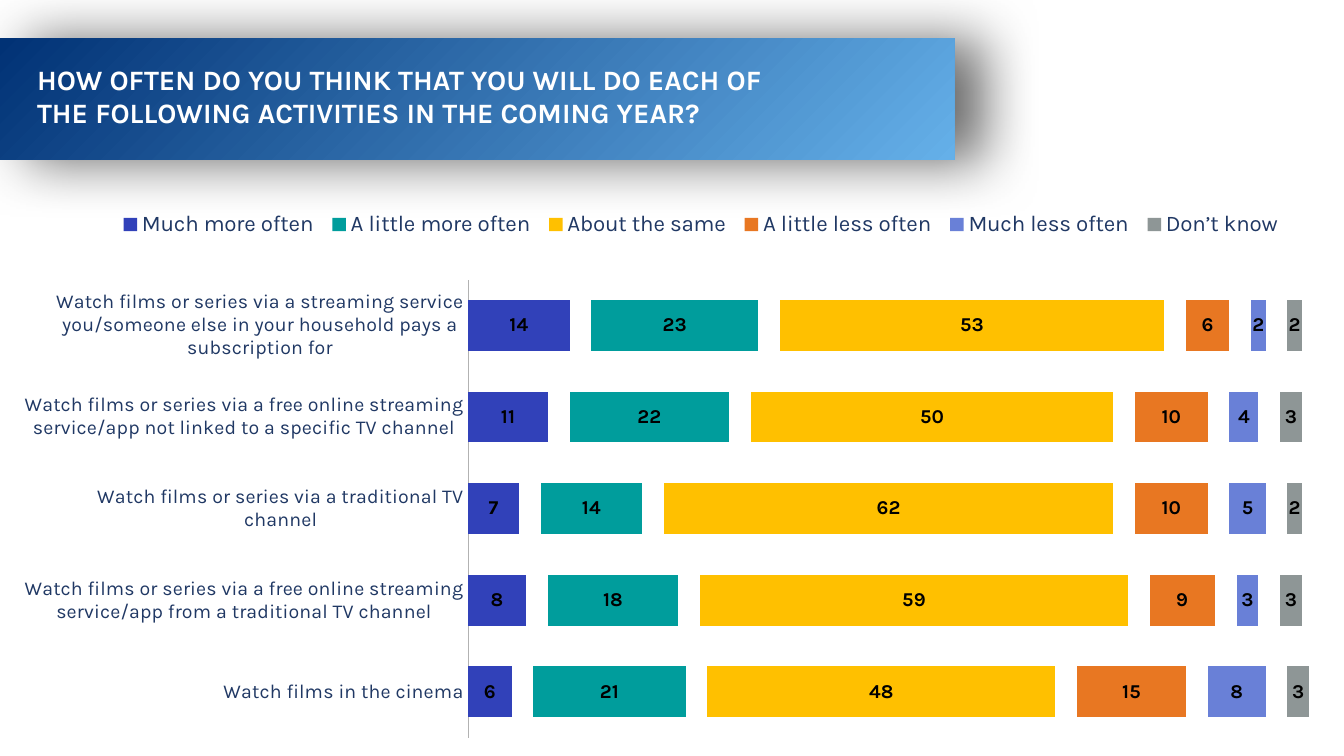
import pptx
import pptx.chart.data
import pptx.dml.color
import pptx.enum.chart
import pptx.enum.shapes
import pptx.enum.text
import pptx.oxml
import pptx.util

Pt = pptx.util.Pt
enum = pptx.enum.chart

THEME = {
    "font": "Karla", "base": "DejaVu Sans",
    "white": "FFFFFF", "black": "000000", "navy": "203864", "line": "B2B2B2",
    "light": "65B0E9", "dark": "013275",
    "title": 20, "key": 16, "label": 14, "small": 12,
}

TITLE = ("HOW OFTEN DO YOU THINK THAT YOU WILL DO EACH OF "
         "THE FOLLOWING ACTIVITIES IN THE COMING YEAR?")
CATS = [
    "Watch films or series via a streaming service you/someone else in your household pays a subscription for",
    "Watch films or series via a free online streaming service/app not linked to a specific TV channel",
    "Watch films or series via a traditional TV channel",
    "Watch films or series via a free online streaming service/app from a traditional TV channel",
    "Watch films in the cinema",
]
BARS = [
    ("Much more often", "3141B9", (14, 11, 7, 8, 6)),
    ("A little more often", "009D9C", (23, 22, 14, 18, 21)),
    ("About the same", "FFC000", (53, 50, 62, 59, 48)),
    ("A little less often", "E87722", (6, 10, 10, 9, 15)),
    ("Much less often", "6980D7", (2, 4, 5, 3, 8)),
    ("Don’t know", "8E9696", (2, 3, 2, 3, 3)),
]
GAP = 3  # width of the clear bar between two answers

A_NS = 'xmlns:a="http://schemas.openxmlformats.org/drawingml/2006/main"'
C_NS = 'xmlns:c="http://schemas.openxmlformats.org/drawingml/2006/chart"'


def rgb(code):
    return pptx.dml.color.RGBColor.from_string(code)


def put(item, vals):
    for name, val in vals.items():
        setattr(item, name, val)


def layout(x, y, wide, high, inner=False):
    target = '<c:layoutTarget val="inner"/>' if inner else ""
    sides = "".join(f'<c:{tag} val="{val}"/>'
                    for tag, val in zip("xywh", (x, y, wide, high)))
    return pptx.oxml.parse_xml(
        f'<c:layout {C_NS}><c:manualLayout>{target}<c:xMode val="edge"/>'
        f'<c:yMode val="edge"/>{sides}</c:manualLayout></c:layout>')


class Deck:
    def __init__(self, theme):
        self.theme = theme
        self.show = pptx.Presentation()
        put(self.show, {"slide_width": Pt(960), "slide_height": Pt(540)})
        self.slide = self.show.slides.add_slide(self.show.slide_layouts[6])

    def style(self, font, size, color, bold=False, face="font"):
        put(font, {"name": self.theme[face], "size": Pt(self.theme[size]), "bold": bold})
        font.color.rgb = rgb(self.theme[color])

    def band(self, *box):
        shape = self.slide.shapes.add_shape(
            pptx.enum.shapes.MSO_SHAPE.RECTANGLE, *map(Pt, box))
        shape.line.fill.background()
        props = shape._element.spPr
        # Radial blend from the lower right corner
        props.insert(2, pptx.oxml.parse_xml(
            f'<a:gradFill {A_NS} rotWithShape="1"><a:gsLst>'
            f'<a:gs pos="0"><a:srgbClr val="{self.theme["light"]}"/></a:gs>'
            f'<a:gs pos="100000"><a:srgbClr val="{self.theme["dark"]}"/></a:gs></a:gsLst>'
            '<a:path path="circle"><a:fillToRect l="100000" t="100000"/></a:path>'
            '</a:gradFill>'))
        # Soft shadow to the right
        props.append(pptx.oxml.parse_xml(
            f'<a:effectLst {A_NS}><a:outerShdw blurRad="{Pt(40)}" dist="{Pt(20)}" '
            f'dir="300000" algn="ctr" rotWithShape="0"><a:srgbClr val="{self.theme["black"]}">'
            '<a:alpha val="59000"/></a:srgbClr></a:outerShdw></a:effectLst>'))

    def text(self, words, *box):
        frame = self.slide.shapes.add_textbox(*map(Pt, box)).text_frame
        put(frame, {"margin_left": 0, "margin_top": 0, "margin_right": 0,
                    "margin_bottom": 0, "word_wrap": True,
                    "auto_size": pptx.enum.text.MSO_AUTO_SIZE.SHAPE_TO_FIT_TEXT})
        run = frame.paragraphs[0].add_run()
        run.text = words
        self.style(run.font, "title", "white", True)

    def chart(self, cats, bars, *box):
        data = pptx.chart.data.CategoryChartData(number_format="0")
        data.categories = cats
        for num, (name, _, vals) in enumerate(bars):
            if num:
                data.add_series(f"Series {2 * num}", [GAP] * len(cats))
            data.add_series(name, vals)
        chart = self.slide.shapes.add_chart(
            enum.XL_CHART_TYPE.BAR_STACKED, *map(Pt, box), data).chart
        put(chart, {"has_title": False, "has_legend": True})
        self.style(chart.font, "small", "black", face="base")
        plot = chart.plots[0]
        put(plot, {"gap_width": 80, "overlap": 100, "vary_by_categories": False})
        area = chart._chartSpace.chart.plotArea
        for old in area.xpath("c:layout"):
            area.remove(old)
        area.insert(0, layout(0.308, 0.162, 0.692, 0.806, inner=True))
        self.paint(plot.series, bars)
        self.axes(chart)
        self.key(chart.legend, len(bars))

    def paint(self, series, bars):
        for num, item in enumerate(series):
            if num % 2:
                item.format.fill.background()
                continue
            item.format.fill.solid()
            item.format.fill.fore_color.rgb = rgb(bars[num // 2][1])
            labels = item.data_labels
            put(labels, {"show_value": True, "number_format": "0",
                         "number_format_is_linked": False,
                         "position": enum.XL_LABEL_POSITION.CENTER})
            self.style(labels.font, "label", "black", True)

    def axes(self, chart):
        none = enum.XL_TICK_MARK.NONE
        cat = chart.category_axis
        put(cat, {"reverse_order": True, "major_tick_mark": none,
                  "minor_tick_mark": none, "has_major_gridlines": False})
        self.style(cat.tick_labels.font, "label", "navy")
        cat.format.line.width = Pt(0.75)
        cat.format.line.color.rgb = rgb(self.theme["line"])
        put(chart.value_axis, {"minimum_scale": 0, "maximum_scale": 137, "major_unit": 10,
                               "has_major_gridlines": False, "visible": False})

    def key(self, legend, count):
        put(legend, {"position": enum.XL_LEGEND_POSITION.TOP, "include_in_layout": False})
        self.style(legend.font, "key", "navy")
        node = legend._element
        for old in node.xpath("c:layout"):
            node.remove(old)
        # Leave the clear bars out of the legend
        hides = [pptx.oxml.parse_xml(
            f'<c:legendEntry {C_NS}><c:idx val="{num}"/><c:delete val="1"/></c:legendEntry>')
            for num in range(1, 2 * count - 1, 2)]
        for spot, part in enumerate(hides + [layout(0.06, 0.03, 0.82, 0.07)], 1):
            node.insert(spot, part)


def main():
    deck = Deck(THEME)
    # Title band
    deck.band(0, 27.5, 682, 86.5)
    deck.text(TITLE, 26.5, 44.5, 554.5, 48)
    # Answers by activity
    deck.chart(CATS, BARS, 17.5, 134, 1026.5, 406)
    deck.show.save("out.pptx")


if __name__ == "__main__":
    main()
